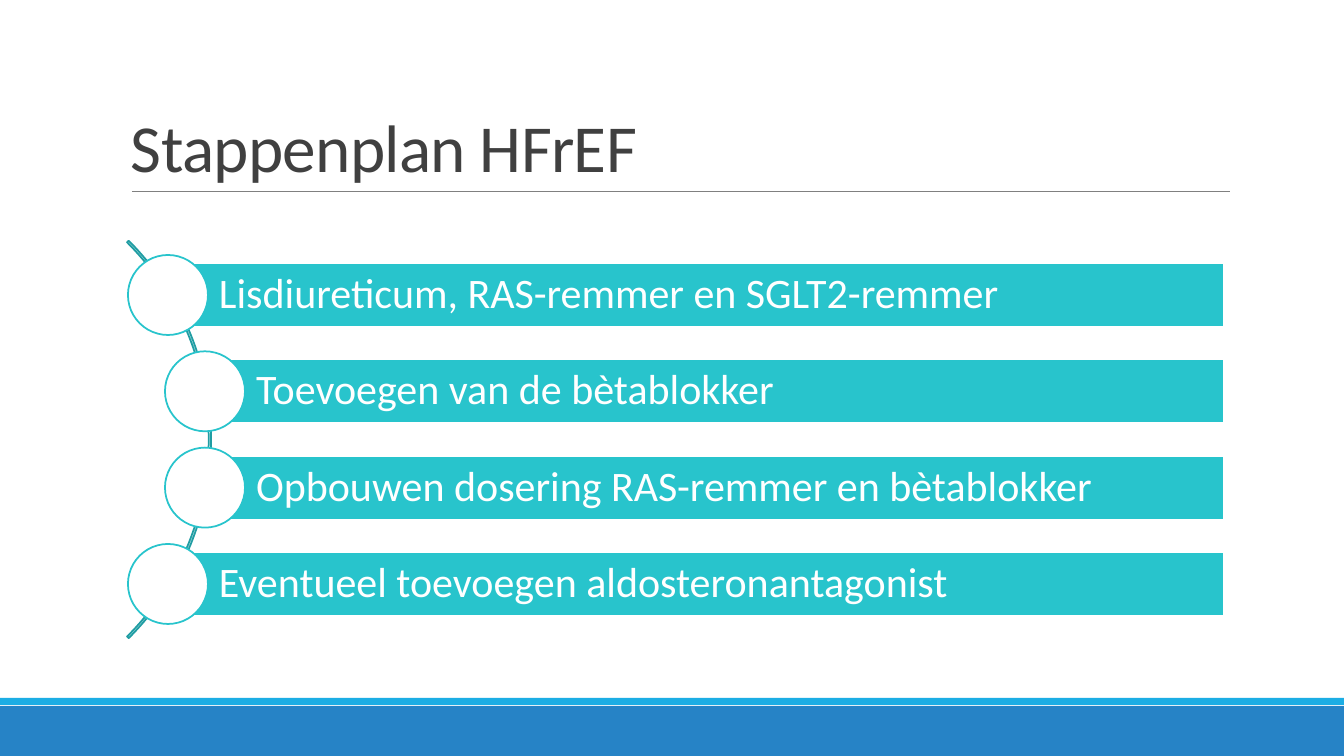
import pptx
import pptx.dml.color
import pptx.enum.shapes
import pptx.enum.text
import pptx.oxml.ns
import pptx.util
from lxml import etree

SHAPE = pptx.enum.shapes.MSO_SHAPE
ANCHOR = pptx.enum.text.MSO_ANCHOR
EMU_PER_PX = 914400 / 100.8

WHITE, TEAL, DARK_TEAL = "FFFFFF", "28C4CC", "209DA3"
BLUE, LIGHT_BLUE = "2683C6", "1CADE4"
GREY, DARK_GREY = "808080", "404040"

STEPS = [
    ("Lisdiureticum, RAS-remmer en SGLT2-remmer", 168),
    ("Toevoegen van de bètablokker", 205),
    ("Opbouwen dosering RAS-remmer en bètablokker", 205),
    ("Eventueel toevoegen aldosteronantagonist", 168),
]
FIRST_Y, LAST_Y = 295, 584
BAR_RIGHT, BAR_HEIGHT, CIRCLE = 1224, 64, 80
ARC_SIZE, ARC_LEFT = 562, -351


def px(n):
    return pptx.util.Emu(round(n * EMU_PER_PX))


def rgb(value):
    return pptx.dml.color.RGBColor.from_string(value)


def write(sp, text, size, color, font="Calibri", anchor=ANCHOR.MIDDLE,
          insets=(10, 5, 10, 5), line_spacing=1.0, tracking=None):
    """Fill a shape with one paragraph; insets are left, top, right, bottom in px."""
    tf = sp.text_frame
    tf.word_wrap = True
    tf.vertical_anchor = anchor
    tf.margin_left, tf.margin_top, tf.margin_right, tf.margin_bottom = map(px, insets)
    p = tf.paragraphs[0]
    p.alignment = pptx.enum.text.PP_ALIGN.LEFT
    p.line_spacing = line_spacing
    r = p.add_run()
    r.text = text
    r.font.name = font
    r.font.size = pptx.util.Pt(size)
    r.font.color.rgb = rgb(color)
    if tracking is not None:
        r._r.get_or_add_rPr().set("spc", str(round(tracking * 100)))


class Deck:
    def __init__(self, width, height):
        self.prs = pptx.Presentation()
        self.prs.slide_width, self.prs.slide_height = px(width), px(height)
        self.s = self.prs.slides.add_slide(self.prs.slide_layouts[6])

    def shape(self, kind, x, y, w, h, fill=None, line=None, adjustments=()):
        sp = self.s.shapes.add_shape(kind, px(x), px(y), px(w), px(h))
        sp.shadow.inherit = False
        for i, value in enumerate(adjustments):
            sp.adjustments[i] = value
        if fill:
            sp.fill.solid()
            sp.fill.fore_color.rgb = rgb(fill)
        else:
            sp.fill.background()
        if line:
            sp.line.color.rgb = rgb(line)
            sp.line.width = pptx.util.Pt(1.25)
        else:
            sp.line.fill.background()
        return sp

    def rule(self, x1, y1, x2, y2, color, width):
        cx = self.s.shapes.add_connector(
            pptx.enum.shapes.MSO_CONNECTOR.STRAIGHT, px(x1), px(y1), px(x2), px(y2))
        cx.line.color.rgb = rgb(color)
        cx.line.width = pptx.util.Pt(width)
        etree.SubElement(cx._element.spPr, pptx.oxml.ns.qn("a:effectLst"))

    def text(self, x, y, w, h, text, **style):
        write(self.s.shapes.add_textbox(px(x), px(y), px(w), px(h)), text, **style)

    def step(self, text, x, y):
        """Draw a bar and its circle, both centred on y; the circle sits on the bar's left end."""
        bar = self.shape(SHAPE.RECTANGLE, x, y - BAR_HEIGHT / 2,
                         BAR_RIGHT - x, BAR_HEIGHT, TEAL, WHITE)
        write(bar, text, size=30, color=WHITE, insets=(51, 8, 8, 8), line_spacing=0.9)
        self.shape(SHAPE.OVAL, x - CIRCLE / 2, y - CIRCLE / 2,
                   CIRCLE, CIRCLE, WHITE, TEAL)


def main():
    deck = Deck(1344, 756)
    deck.shape(SHAPE.RECTANGLE, 0, 706, 1344, 50, BLUE)
    deck.shape(SHAPE.RECTANGLE, 0, 698, 1344, 7, LIGHT_BLUE)
    deck.rule(132, 191, 1230, 191, GREY, 0.5)
    deck.text(121, 31, 1109, 160, "Stappenplan HFrEF", size=48, color=DARK_GREY,
              anchor=ANCHOR.BOTTOM, line_spacing=0.85, tracking=-0.5)

    arc_top = (FIRST_Y + LAST_Y - ARC_SIZE) / 2
    # Angles from 315 to 45 degrees, then the thickness of the band
    deck.shape(SHAPE.BLOCK_ARC, ARC_LEFT, arc_top, ARC_SIZE, ARC_SIZE,
               line=DARK_TEAL, adjustments=(189, 27, 0.004))
    pitch = (LAST_Y - FIRST_Y) / (len(STEPS) - 1)
    for i, (text, x) in enumerate(STEPS):
        deck.step(text, x, FIRST_Y + i * pitch)

    deck.prs.save("out.pptx")


if __name__ == "__main__":
    main()
